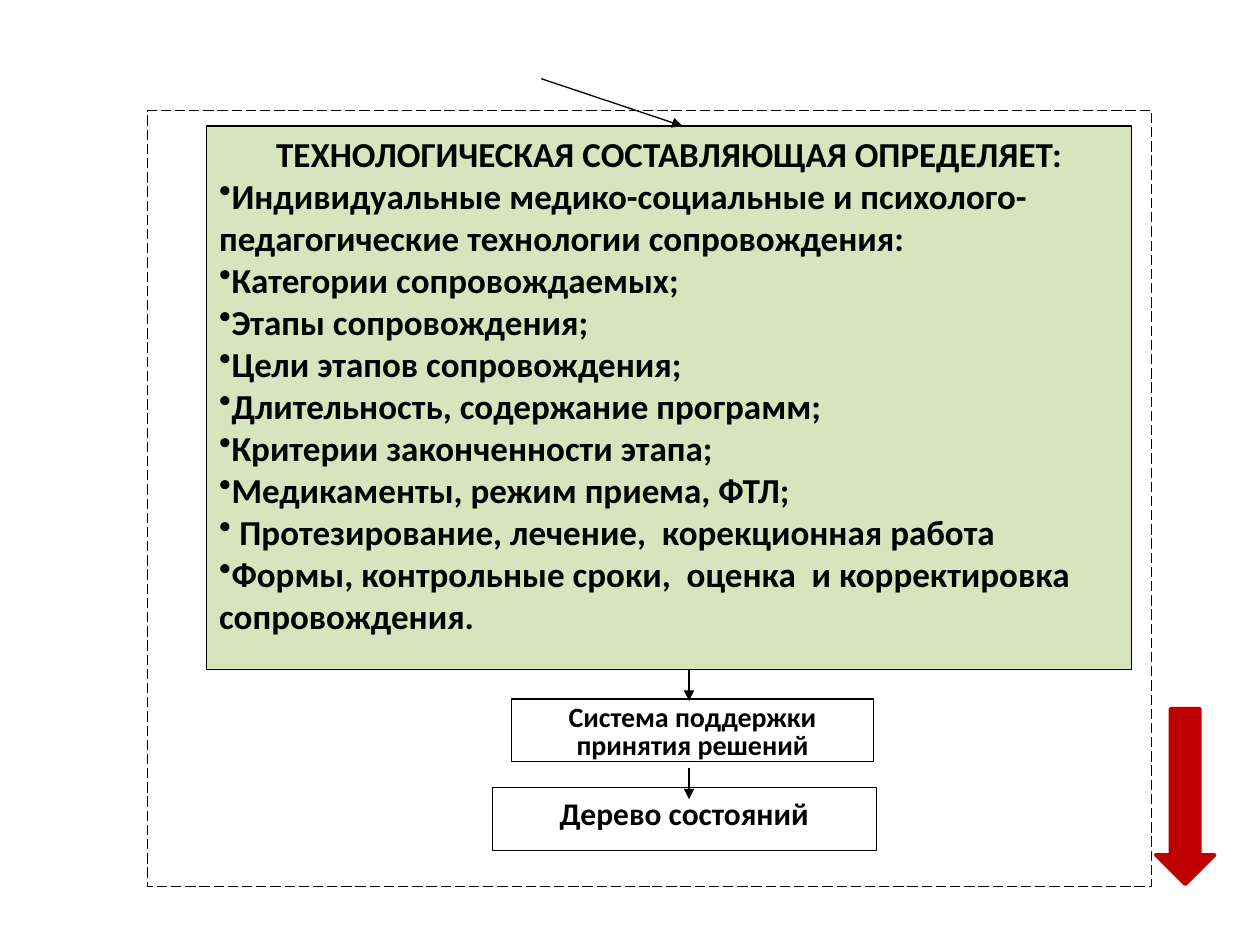
from lxml import etree
from pptx import Presentation, util as u
from pptx.dml.color import RGBColor
from pptx.enum import dml, shapes, text
from pptx.oxml.ns import qn

BLACK, WHITE, GREEN, RED = "000000", "FFFFFF", "D7E4BD", "C00000"
TITLE = "ТЕХНОЛОГИЧЕСКАЯ СОСТАВЛЯЮЩАЯ ОПРЕДЕЛЯЕТ:"
ITEMS = [
    "Индивидуальные медико-социальные и психолого-педагогические технологии сопровождения:",
    "Категории сопровождаемых;",
    "Этапы сопровождения;",
    "Цели этапов сопровождения;",
    "Длительность, содержание программ;",
    "Критерии законченности этапа;",
    "Медикаменты, режим приема, ФТЛ;",
    " Протезирование, лечение,  корекционная работа",
    "Формы, контрольные сроки,  оценка  и корректировка сопровождения.",
]


def color(value):
    """Turn a hex string into a colour."""
    return RGBColor.from_string(value)


def add_box(s, x, y, w, h, fill=None, line=BLACK, width=0.75, dash=None,
            kind=shapes.MSO_SHAPE.RECTANGLE):
    """Add a preset shape with its fill and outline."""
    sp = s.shapes.add_shape(kind, u.Pt(x), u.Pt(y), u.Pt(w), u.Pt(h))
    sp.shadow.inherit = False
    if fill:
        sp.fill.solid()
        sp.fill.fore_color.rgb = color(fill)
    else:
        sp.fill.background()
    sp.line.color.rgb = color(line)
    sp.line.width = u.Pt(width)
    if dash:
        sp.line.dash_style = dash
    tf = sp.text_frame
    tf.word_wrap = True
    tf.vertical_anchor = text.MSO_ANCHOR.TOP
    return sp


def add_text(sp, content, size, align=text.PP_ALIGN.CENTER, spacing=None,
             bullet=None, tab=None):
    """Write the next bold paragraph of a shape."""
    tf = sp.text_frame
    p = tf.add_paragraph() if tf.text else tf.paragraphs[0]
    p.alignment = align
    if spacing:
        p.line_spacing = u.Pt(spacing)
    r = p.add_run()
    r.text = content
    r.font.name = "Calibri"
    r.font.size = u.Pt(size)
    r.font.bold = True
    r.font.color.rgb = color(BLACK)
    props = p._p.get_or_add_pPr()
    if bullet:
        etree.SubElement(props, qn("a:buFontTx"))
        etree.SubElement(props, qn("a:buChar"), char=bullet)
    if tab:
        tabs = etree.SubElement(props, qn("a:tabLst"))
        etree.SubElement(tabs, qn("a:tab"), pos=str(u.Pt(tab)), algn="l")


def add_arrow(s, x1, y1, x2, y2):
    """Add a thin straight arrow."""
    c = s.shapes.add_connector(shapes.MSO_CONNECTOR.STRAIGHT,
                               u.Pt(x1), u.Pt(y1), u.Pt(x2), u.Pt(y2))
    c.line.color.rgb = color(BLACK)
    c.line.width = u.Pt(0.75)
    etree.SubElement(c.line._get_or_add_ln(), qn("a:tailEnd"), type="triangle")
    etree.SubElement(c._element.spPr, qn("a:effectLst"))


def main():
    """Build the slide and save it."""
    prs = Presentation()
    prs.slide_width, prs.slide_height = u.Pt(720), u.Pt(540)
    s = prs.slides.add_slide(prs.slide_layouts[6])

    add_box(s, 84.3, 63.2, 573.8, 443.3, dash=dml.MSO_LINE.LONG_DASH)

    technology = add_box(s, 118.1, 72, 528.7, 310.5, GREEN)
    add_text(technology, TITLE, 20, tab=18)
    for item in ITEMS:
        add_text(technology, item, 20, text.PP_ALIGN.LEFT, bullet="•", tab=18)

    support = add_box(s, 292.3, 399.4, 206.9, 36, WHITE)
    add_text(support, "Система поддержки принятия решений", 16, spacing=16)
    states = add_box(s, 281.3, 450, 219.4, 36, WHITE)
    add_text(states, "Дерево состояний", 18)

    for y in (438.75, 382.5):
        add_arrow(s, 393.75, y, 393.75, y + 18)
    add_arrow(s, 309.4, 45, 390, 72)

    add_box(s, 660.4, 405, 33.75, 100.4, RED, RED, 2,
            kind=shapes.MSO_SHAPE.DOWN_ARROW)
    prs.save("out.pptx")


if __name__ == "__main__":
    main()
